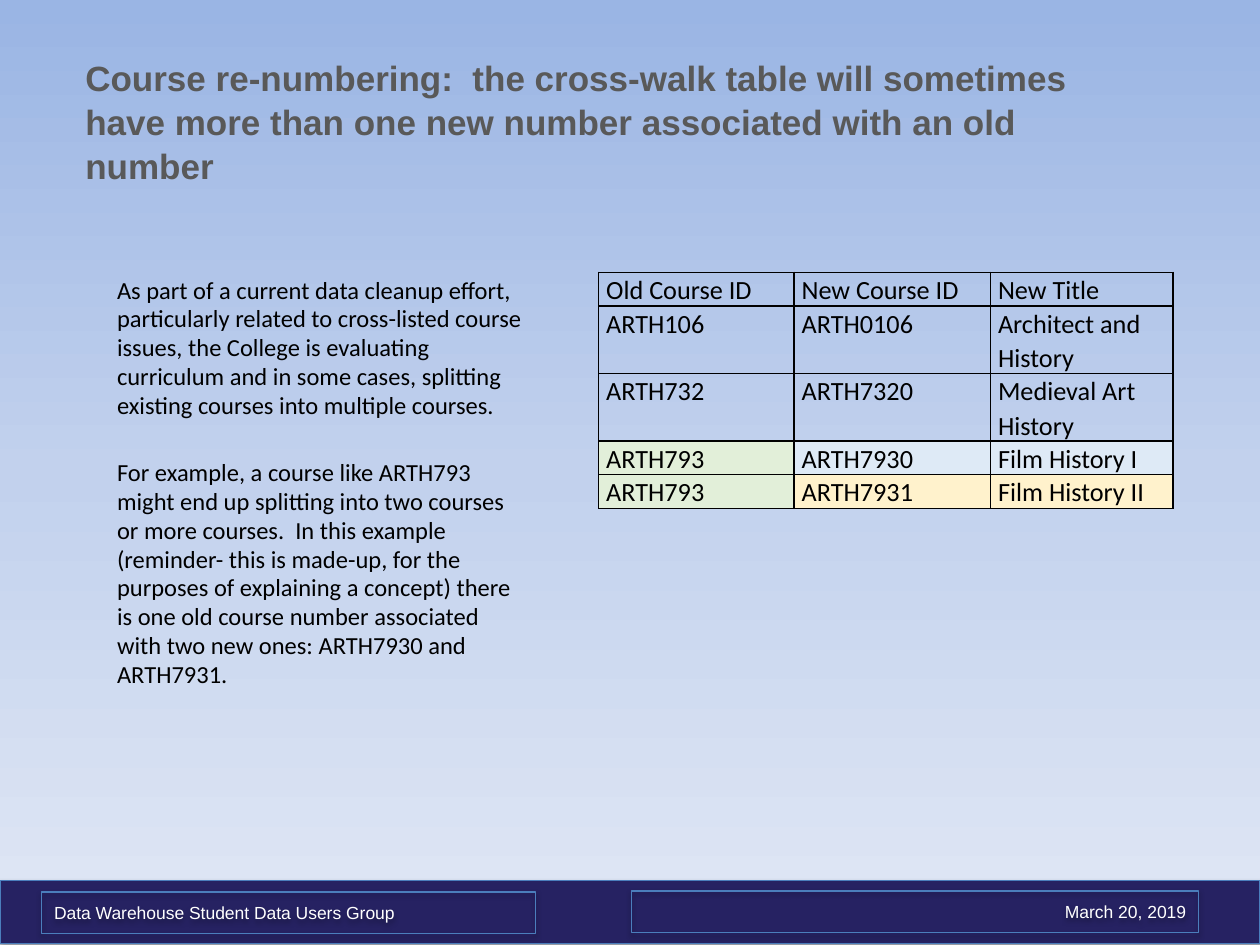
import copy

import pptx
import pptx.dml.color
import pptx.enum.shapes
import pptx.enum.text
import pptx.oxml
import pptx.oxml.ns
import pptx.util

Cm, Pt = pptx.util.Cm, pptx.util.Pt
Align, Anchor = pptx.enum.text.PP_ALIGN, pptx.enum.text.MSO_ANCHOR
NS = pptx.oxml.ns.nsdecls("a")

TITLE = ("Course re-numbering:  the cross-walk table will sometimes "
         "have more than one new number associated with an old number")
BODY = [
    "As part of a current data cleanup effort, particularly related to "
    "cross-listed course issues, the College is evaluating curriculum and in "
    "some cases, splitting existing courses into multiple courses.",
    "For example, a course like ARTH793 might end up splitting into two "
    "courses or more courses.  In this example (reminder- this is made-up, "
    "for the purposes of explaining a concept) there is one old course number "
    "associated with two new ones: ARTH7930 and ARTH7931.",
]
GREEN, BLUE, GOLD = "E2EFD9", "DEEAF6", "FFF2CC"
PLAIN = (None, None, None)
ROWS = [
    (0.66, ("Old Course ID", "New Course ID", "New Title"), PLAIN),
    (1.32, ("ARTH106", "ARTH0106", "Architect and History"), PLAIN),
    (1.32, ("ARTH732", "ARTH7320", "Medieval Art History"), PLAIN),
    (0.66, ("ARTH793", "ARTH7930", "Film History I"), (GREEN, BLUE, BLUE)),
    (0.66, ("ARTH793", "ARTH7931", "Film History II"), (GREEN, GOLD, GOLD)),
]


def color(code):
    return pptx.dml.color.RGBColor.from_string(code)


def paint(fill, code):
    """Fill with a solid colour, or with nothing when code is None."""
    if code:
        fill.solid()
        fill.fore_color.rgb = color(code)
    else:
        fill.background()


class Deck:
    """Holds the current slide and the look of its parts."""

    head, body = "Arial", "Calibri"
    edge = "4B7EBC"

    def __init__(self, slide):
        self.slide = slide

    def back(self, *codes):
        """Top-to-bottom gradient with evenly spaced stops."""
        fill = self.slide.background.fill
        fill.gradient()
        fill.gradient_angle = 270
        stops = self.slide.element.find(".//" + pptx.oxml.ns.qn("a:gsLst"))
        while len(stops) < len(codes):
            stops.append(copy.deepcopy(stops[0]))
        for i, code in enumerate(codes):
            stop = fill.gradient_stops[i]
            stop.color.rgb = color(code)
            stop.position = i / (len(codes) - 1)

    def label(self, para, text, face, size, code, bold=False):
        """Put styled text into a paragraph."""
        para.text = text
        font = para.font
        font.name, font.size, font.bold = face, Pt(size), bold
        font.color.rgb = color(code)

    def text(self, box, texts, face, size, code, bold=False,
             anchor=Anchor.TOP, lead=1.0, gap=0):
        frame = self.slide.shapes.add_textbox(*map(Cm, box)).text_frame
        frame.word_wrap = True
        frame.vertical_anchor = anchor
        for i, text in enumerate(texts):
            para = frame.add_paragraph() if i else frame.paragraphs[0]
            self.label(para, text, face, size, code, bold)
            para.line_spacing = lead
            para.space_before = Pt(gap if i else 0)

    def panel(self, box, fill=None, text=None, align=Align.LEFT):
        """Outlined rectangle with a soft shadow below it."""
        shape = self.slide.shapes.add_shape(
            pptx.enum.shapes.MSO_SHAPE.RECTANGLE, *map(Cm, box))
        paint(shape.fill, fill)
        shape.line.color.rgb = color(self.edge)
        shape.line.width = Pt(0.75)
        shape.shadow.inherit = False
        effects = shape.element.spPr.find(pptx.oxml.ns.qn("a:effectLst"))
        effects.append(pptx.oxml.parse_xml(
            f'<a:outerShdw {NS} blurRad="{Pt(3.1)}" dist="{Pt(1.8)}" '
            'dir="5400000" rotWithShape="0"><a:srgbClr val="000000">'
            '<a:alpha val="35000"/></a:srgbClr></a:outerShdw>'))
        if text:
            frame = shape.text_frame
            frame.word_wrap = True
            frame.vertical_anchor = Anchor.MIDDLE
            para = frame.paragraphs[0]
            self.label(para, text, self.head, 10, "FFFFFF")
            para.alignment = align

    def border(self, cell):
        props = cell._tc.get_or_add_tcPr()
        for side in "LRTB":
            props.append(pptx.oxml.parse_xml(
                f'<a:ln{side} {NS} w="{Pt(1)}"><a:solidFill>'
                f'<a:srgbClr val="000000"/></a:solidFill></a:ln{side}>'))

    def table(self, left, top, widths, rows):
        high = sum(row[0] for row in rows)
        table = self.slide.shapes.add_table(
            len(rows), len(widths), Cm(left), Cm(top),
            Cm(sum(widths)), Cm(high)).table
        table.first_row = table.horz_banding = False
        for col, width in zip(table.columns, widths):
            col.width = Cm(width)
        for line, (height, texts, fills) in zip(table.rows, rows):
            line.height = Cm(height)
            for cell, text, fill in zip(line.cells, texts, fills):
                cell.margin_left = cell.margin_right = Cm(0.15)
                cell.margin_top = cell.margin_bottom = 0
                self.border(cell)
                paint(cell.fill, fill)
                para = cell.text_frame.paragraphs[0]
                self.label(para, text, self.body, 15, "000000")
                para.line_spacing = 1.07


def main():
    show = pptx.Presentation()
    show.slide_width, show.slide_height = Cm(25.4), Cm(19.05)
    deck = Deck(show.slides.add_slide(show.slide_layouts[6]))
    deck.back("9AB5E4", "C2D1ED", "E1E8F5")
    deck.text((1.47, 2.31, 20.52, 1.57), [TITLE], deck.head, 20, "595959",
              bold=True, anchor=Anchor.BOTTOM, lead=1.04)
    deck.text((2.11, 5.44, 8.79, 10.9), BODY, deck.body, 14, "000000",
              lead=0.98, gap=22)
    deck.table(12.07, 5.49, (3.94, 3.96, 3.68), ROWS)
    deck.panel((0, 17.75, 25.4, 1.27), fill="262262")
    deck.panel((0.84, 17.98, 9.96, 0.84),
               text="Data Warehouse Student Data Users Group")
    deck.panel((12.73, 17.96, 11.43, 0.84), text="March 20, 2019",
               align=Align.RIGHT)
    show.save("out.pptx")


if __name__ == "__main__":
    main()
